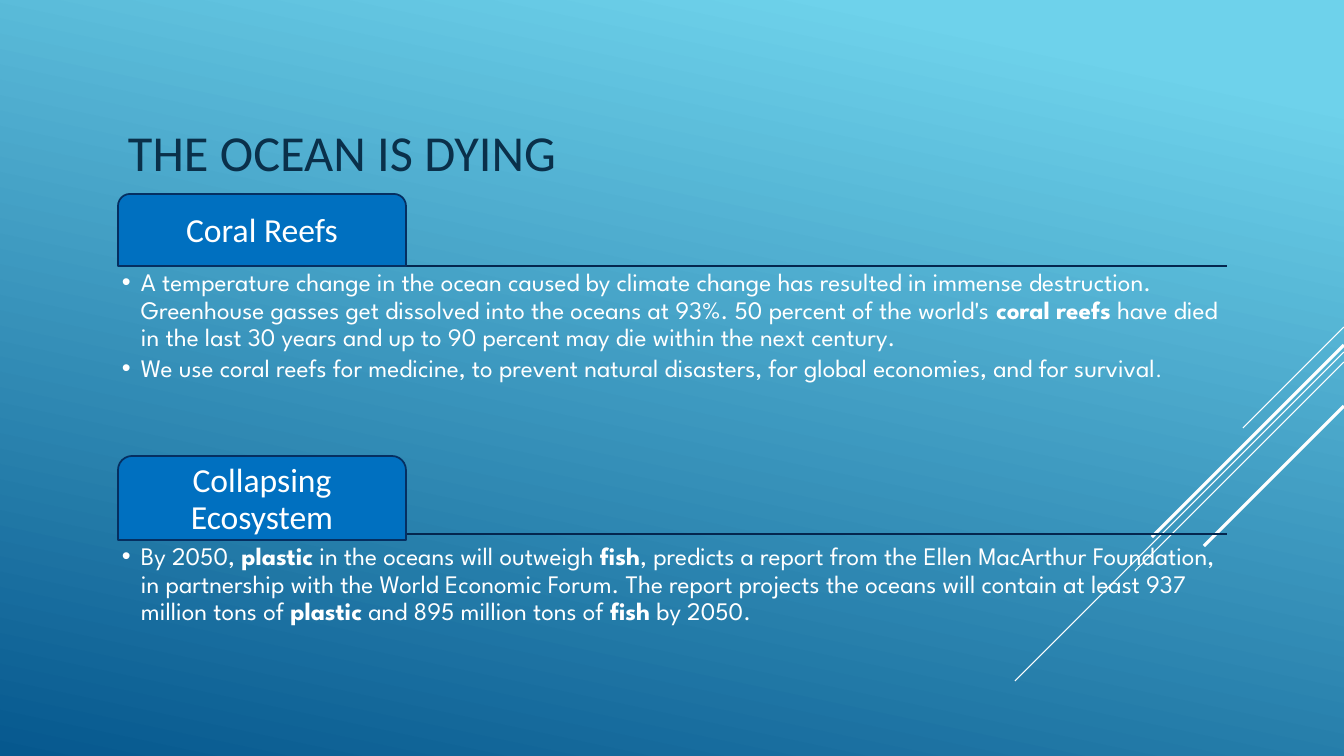
from dataclasses import dataclass

from lxml.etree import SubElement
from pptx import Presentation
from pptx.dml.color import RGBColor
from pptx.enum.shapes import MSO_CONNECTOR, MSO_SHAPE
from pptx.enum.text import MSO_ANCHOR, PP_ALIGN
from pptx.oxml.ns import qn
from pptx.slide import Slide
from pptx.text.text import TextFrame
from pptx.util import Emu, Pt

WHITE = RGBColor(0xFF, 0xFF, 0xFF)
SKY = RGBColor(0x6E, 0xD2, 0xEB)
DEEP = RGBColor(0x06, 0x58, 0x8E)
INK = RGBColor(0x0A, 0x30, 0x4A)
NAVY = RGBColor(0x04, 0x26, 0x4E)
EDGE = RGBColor(0x05, 0x2F, 0x61)
BLUE = RGBColor(0x00, 0x70, 0xC0)

HEAD_FONT = "Calibri"
BODY_FONT = "League Spartan"
WIDTH, HEIGHT = 1344, 756
LEFT, SPAN, TAB = 118, 1109, 288


@dataclass
class Run:
    text: str
    bold: bool = False
    size: int = 18


@dataclass
class Ray:
    top: int
    reach: int
    weight: float


@dataclass
class Topic:
    name: str
    top: int
    tall: int
    rule: int
    depth: int
    points: list[list[Run]]


RAYS = [
    Ray(327, 101, 0.75),
    Ray(352, 329, 0.75),
    Ray(362, 209, 0.75),
    Ray(345, 192, 2.25),
    Ray(406, 140, 2.25),
]

TOPICS = [
    Topic("Coral Reefs", 194, 72, 266, 186, [
        [
            Run("A temperature change in the ocean caused by climate change has "
                "resulted in immense destruction. Greenhouse gasses get dissolved "
                "into the oceans at 93%. 50 percent of the world's "),
            Run("coral reefs", True),
            Run(" have died in the last 30 years and up to 90 percent may die "
                "within the next century."),
        ],
        [
            Run("We use coral reefs for medicine, to prevent natural disasters, "
                "for global economies, and for survival"),
            Run(".", size=15),
        ],
    ]),
    Topic("Collapsing Ecosystem", 456, 84, 534, 144, [
        [
            Run("By 2050, "),
            Run("plastic", True),
            Run(" in the oceans will outweigh "),
            Run("fish", True),
            Run(", predicts a report from the Ellen MacArthur Foundation, in "
                "partnership with the World Economic Forum. The report projects "
                "the oceans will contain at least 937 million tons of "),
            Run("plastic", True),
            Run(" and 895 million tons of "),
            Run("fish", True),
            Run(" by 2050."),
        ],
    ]),
]


def px(count: int) -> Emu:
    return Emu(round(count * 914400 / 100.8))


def add_run(para, run: Run, face: str, color: RGBColor) -> None:
    part = para.add_run()
    part.text = run.text
    part.font.name = face
    part.font.size = Pt(run.size)
    part.font.bold = run.bold
    part.font.color.rgb = color


def set_frame(frame: TextFrame, inset: int, anchor: MSO_ANCHOR) -> None:
    frame.word_wrap = True
    frame.vertical_anchor = anchor
    frame.margin_left = frame.margin_right = px(inset)
    frame.margin_top = frame.margin_bottom = px(inset)


def add_line(slide: Slide, x: int, y: int, end_x: int, end_y: int,
             color: RGBColor, weight: float) -> None:
    line = slide.shapes.add_connector(
        MSO_CONNECTOR.STRAIGHT, px(x), px(y), px(end_x), px(end_y))
    line.line.color.rgb = color
    line.line.width = Pt(weight)
    SubElement(line._element.spPr, qn("a:effectLst"))


def add_title(slide: Slide, text: str) -> None:
    box = slide.shapes.add_textbox(px(LEFT), px(76), px(SPAN), px(151))
    set_frame(box.text_frame, 10, MSO_ANCHOR.MIDDLE)
    add_run(box.text_frame.paragraphs[0], Run(text, size=36), HEAD_FONT, INK)


def add_tab(slide: Slide, topic: Topic) -> None:
    tab = slide.shapes.add_shape(
        MSO_SHAPE.ROUND_2_SAME_RECTANGLE,
        px(LEFT), px(topic.top), px(TAB), px(topic.tall))
    tab.adjustments[0] = 0.167
    tab.adjustments[1] = 0
    tab.shadow.inherit = False
    tab.fill.solid()
    tab.fill.fore_color.rgb = BLUE
    tab.line.color.rgb = EDGE
    tab.line.width = Pt(1.25)
    set_frame(tab.text_frame, 5, MSO_ANCHOR.MIDDLE)
    para = tab.text_frame.paragraphs[0]
    para.alignment = PP_ALIGN.CENTER
    para.line_spacing = 0.9
    add_run(para, Run(topic.name, size=24), HEAD_FONT, WHITE)


def add_points(slide: Slide, topic: Topic) -> None:
    box = slide.shapes.add_textbox(
        px(LEFT), px(topic.top + topic.tall), px(SPAN), px(topic.depth))
    frame = box.text_frame
    set_frame(frame, 4, MSO_ANCHOR.TOP)
    for index, point in enumerate(topic.points):
        para = frame.add_paragraph() if index else frame.paragraphs[0]
        para.line_spacing = 0.9
        para.space_after = Pt(3)
        props = para._p.get_or_add_pPr()
        props.set("marL", str(px(19)))
        props.set("indent", str(-px(19)))
        SubElement(props, qn("a:buFont"), typeface="Arial")
        SubElement(props, qn("a:buChar"), char="•")
        for run in point:
            add_run(para, run, BODY_FONT, WHITE)


def main() -> None:
    deck = Presentation()
    deck.slide_width, deck.slide_height = px(WIDTH), px(HEIGHT)
    slide = deck.slides.add_slide(deck.slide_layouts[6])

    # Background gradient
    fill = slide.background.fill
    fill.gradient()
    fill.gradient_angle = 258
    for stop, place, color in zip(fill.gradient_stops, (0.1, 1), (SKY, DEEP)):
        stop.position = place
        stop.color.rgb = color

    # Diagonal rays from the right edge
    for ray in RAYS:
        add_line(slide, WIDTH, ray.top, WIDTH - ray.reach, ray.top + ray.reach,
                 WHITE, ray.weight)

    # Title and topics
    add_title(slide, "THE OCEAN IS DYING")
    for topic in TOPICS:
        add_line(slide, LEFT, topic.rule, LEFT + SPAN, topic.rule, NAVY, 1.25)
        add_tab(slide, topic)
        add_points(slide, topic)

    deck.save("out.pptx")


if __name__ == "__main__":
    main()
